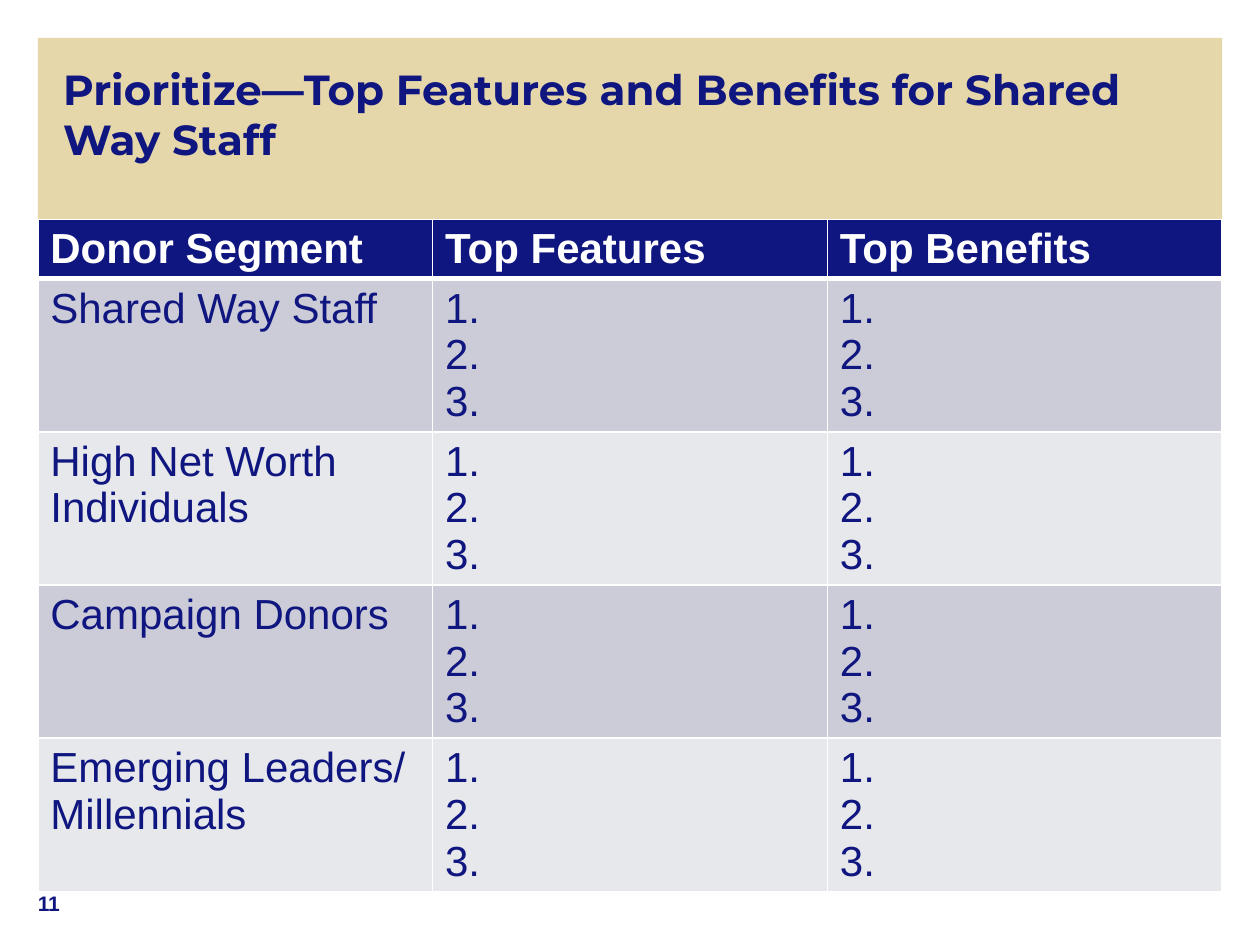
from dataclasses import dataclass

from lxml import etree
from pptx import Presentation
from pptx.dml.color import RGBColor
from pptx.enum.shapes import MSO_SHAPE
from pptx.enum.text import MSO_ANCHOR, MSO_AUTO_SIZE, PP_ALIGN
from pptx.oxml.ns import qn
from pptx.util import Inches, Pt

RECT = MSO_SHAPE.RECTANGLE
TOP, BOTTOM = MSO_ANCHOR.TOP, MSO_ANCHOR.BOTTOM
LEFT = PP_ALIGN.LEFT
NO_FIT = MSO_AUTO_SIZE.NONE


@dataclass(frozen=True)
class Theme:
    navy: str = "10167F"
    sand: str = "E6D7AA"
    white: str = "FFFFFF"
    bands: tuple = ("CCCCD8", "E7E8EC")
    head: str = "Montserrat"
    body: str = "Arial"
    large: int = 24
    small: int = 12


class Deck:
    def __init__(self, theme):
        self.theme = theme
        self.prs = Presentation()
        self.prs.slide_width, self.prs.slide_height = Inches(10), Inches(7.5)
        self.slide = self.prs.slides.add_slide(self.prs.slide_layouts[5])

    def style(self, para, face, size, color, bold):
        para.alignment = LEFT
        font = para.font
        font.name, font.size, font.bold = face, Pt(size), bold
        font.color.rgb = RGBColor.from_string(color)

    def frame(self, shape, insets, anchor):
        frame = shape.text_frame
        frame.word_wrap = True
        frame.auto_size = NO_FIT
        frame.vertical_anchor = anchor
        (frame.margin_left, frame.margin_top,
         frame.margin_right, frame.margin_bottom) = map(Inches, insets)
        return frame

    def panel(self, box, color):
        shapes = self.slide.shapes
        shape = shapes.add_shape(RECT, *map(Inches, box))
        shape.shadow.inherit = False
        shape.fill.solid()
        shape.fill.fore_color.rgb = RGBColor.from_string(color)
        shape.line.fill.background()
        # Send behind the title
        shapes.element.insert(2, shape.element)

    def title(self, box, text):
        shape = self.slide.shapes.title
        shape.left, shape.top, shape.width, shape.height = map(Inches, box)
        frame = self.frame(shape, (0.2, 0.2, 0.5, 0), TOP)
        frame.text = text
        t = self.theme
        self.style(frame.paragraphs[0], t.head, t.large, t.navy, True)

    def border(self, cell, base):
        props = cell._tc.get_or_add_tcPr()
        widths = {"a:lnL": 1, "a:lnR": 1, "a:lnT": 1, "a:lnB": base}
        for index, (tag, width) in enumerate(widths.items()):
            line = etree.Element(qn(tag), w=str(Pt(width)))
            fill = etree.SubElement(line, qn("a:solidFill"))
            etree.SubElement(fill, qn("a:srgbClr"), val=self.theme.white)
            props.insert(index, line)

    def cell(self, cell, text, row):
        t = self.theme
        head = row == 0
        cell.text = text
        for para in cell.text_frame.paragraphs:
            self.style(para, t.body, t.large, t.white if head else t.navy, head)
        cell.fill.solid()
        color = t.navy if head else t.bands[(row - 1) % 2]
        cell.fill.fore_color.rgb = RGBColor.from_string(color)
        self.border(cell, 3 if head else 1)

    def table(self, box, rows, height):
        table = self.slide.shapes.add_table(
            len(rows), len(rows[0]), *map(Inches, box)).table
        for r, row in enumerate(rows):
            # Rows grow to fit their text
            table.rows[r].height = Inches(height)
            for c, text in enumerate(row):
                self.cell(table.cell(r, c), text, r)

    def number(self, box, text):
        shape = self.slide.shapes.add_textbox(*map(Inches, box))
        frame = self.frame(shape, (0, 0, 0, 0.08), BOTTOM)
        frame.text = text
        t = self.theme
        self.style(frame.paragraphs[0], t.body, t.small, t.navy, True)


def main():
    theme = Theme()
    deck = Deck(theme)
    edge, width = 0.3, 9.4

    # Heading on its panel
    deck.panel((edge, 0.3, width, 6.28), theme.sand)
    deck.title((edge, 0.3, width, 1.25),
               "Prioritize—Top Features and Benefits for Shared Way Staff")

    # Worksheet: three blanks per donor segment
    blanks = "1.\n2.\n3."
    groups = ("Shared Way Staff", "High Net Worth Individuals",
              "Campaign Donors", "Emerging Leaders/ Millennials")
    rows = [("Donor Segment", "Top Features", "Top Benefits")]
    rows += [(group, blanks, blanks) for group in groups]
    deck.table((edge, 1.74, width, 4.41), rows, 0.41)

    # Page number
    deck.number((edge, 6.85, 0.5, 0.5), "11")
    deck.prs.save("out.pptx")


if __name__ == "__main__":
    main()
